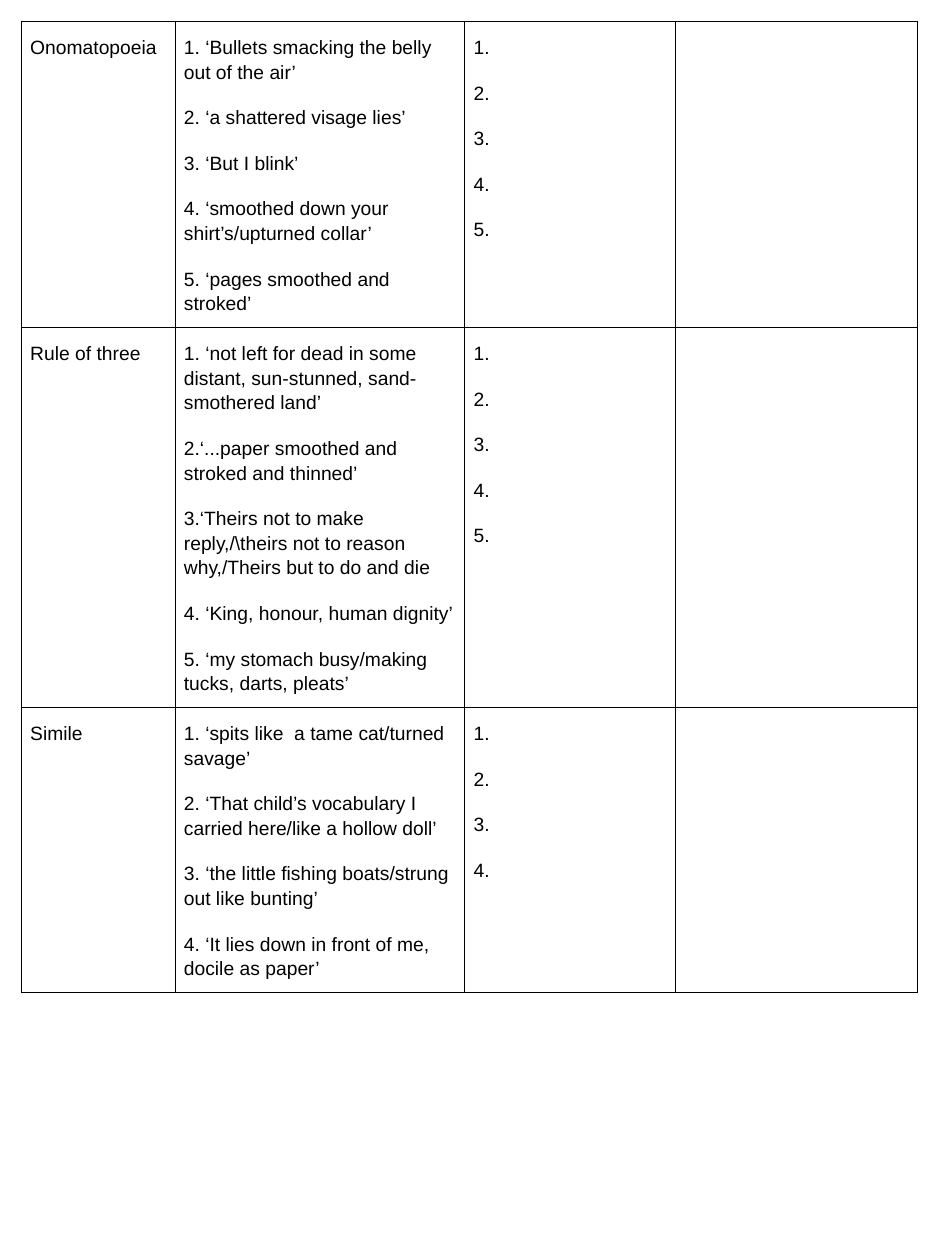
from lxml import etree
from pptx import Presentation
from pptx.dml.color import RGBColor
from pptx.oxml.ns import qn
from pptx.util import Inches, Pt

BLANK_LAYOUT = 6
BLACK = "000000"
BORDER_WIDTH = Pt(0.75)
COLUMN_WIDTHS = (1.22, 2.3, 1.67, 1.92)
ROW_HEIGHTS = (2.18, 2.74, 2.01)
TABLE_BOX = (0.17, 0.17, sum(COLUMN_WIDTHS), sum(ROW_HEIGHTS))
MARGINS = {
    "margin_left": Inches(0.07),
    "margin_right": Inches(0.07),
    "margin_top": Inches(0.1),
    "margin_bottom": Inches(0.1),
}
PARA_FORMAT = {"line_spacing": 1.15, "space_before": Pt(12), "space_after": Pt(0)}
FONT_FORMAT = {"name": "Arial", "size": Pt(11)}
TECHNIQUES = {
    "Onomatopoeia": [
        "1. ‘Bullets smacking the belly out of the air’",
        "2. ‘a shattered visage lies’",
        "3. ‘But I blink’",
        "4. ‘smoothed down your shirt’s/upturned collar’",
        "5. ‘pages smoothed and stroked’",
    ],
    "Rule of three": [
        "1. ‘not left for dead in some distant, sun-stunned, sand-smothered land’",
        "2.‘...paper smoothed and stroked and thinned’",
        "3.‘Theirs not to make reply,/\\theirs not to reason why,/Theirs but to do and die",
        "4. ‘King, honour, human dignity’",
        "5. ‘my stomach busy/making tucks, darts, pleats’",
    ],
    "Simile": [
        "1. ‘spits like  a tame cat/turned savage’",
        "2. ‘That child’s vocabulary I carried here/like a hollow doll’",
        "3. ‘the little fishing boats/strung out like bunting’",
        "4. ‘It lies down in front of me, docile as paper’",
    ],
}


def apply_format(target, values):
    """Set each named attribute of the target."""
    for name, value in values.items():
        setattr(target, name, value)


def colour(value):
    """Turn a hex string into a colour."""
    return RGBColor.from_string(value)


def add_borders(cell):
    """Draw a thin black line on all four sides of a cell."""
    properties = cell._tc.get_or_add_tcPr()
    for position, side in enumerate(("lnL", "lnR", "lnT", "lnB")):
        line = etree.Element(qn(f"a:{side}"), w=str(BORDER_WIDTH))
        fill = etree.SubElement(line, qn("a:solidFill"))
        etree.SubElement(fill, qn("a:srgbClr"), val=BLACK)
        properties.insert(position, line)


def fill_cell(cell, lines):
    """Format a cell and write one paragraph for each line."""
    apply_format(cell, MARGINS)
    cell.fill.background()
    add_borders(cell)
    frame = cell.text_frame
    for index, line in enumerate(lines):
        para = frame.add_paragraph() if index else frame.paragraphs[0]
        apply_format(para, PARA_FORMAT)
        span = para.add_run()
        span.text = line
        apply_format(span.font, FONT_FORMAT)
        span.font.color.rgb = colour(BLACK)
    if lines:
        para.space_after = Pt(12)


def add_technique_table(page, box):
    """Place the table of techniques, quotations and numbered answer spaces."""
    shape = page.shapes.add_table(
        len(ROW_HEIGHTS), len(COLUMN_WIDTHS), *map(Inches, box)
    )
    table = shape.table
    apply_format(table, {"first_row": False, "horz_banding": False})
    for column, width in zip(table.columns, COLUMN_WIDTHS):
        column.width = Inches(width)
    for row, height, (name, quotes) in zip(
        table.rows, ROW_HEIGHTS, TECHNIQUES.items()
    ):
        row.height = Inches(height)
        numbers = [f"{number}." for number in range(1, len(quotes) + 1)]
        for cell, lines in zip(row.cells, ([name], quotes, numbers, [])):
            fill_cell(cell, lines)


def main():
    """Build and save the deck."""
    deck = Presentation()
    apply_format(deck, {"slide_width": Inches(7.5), "slide_height": Inches(10)})
    page = deck.slides.add_slide(deck.slide_layouts[BLANK_LAYOUT])
    add_technique_table(page, TABLE_BOX)
    deck.save("out.pptx")


if __name__ == "__main__":
    main()
